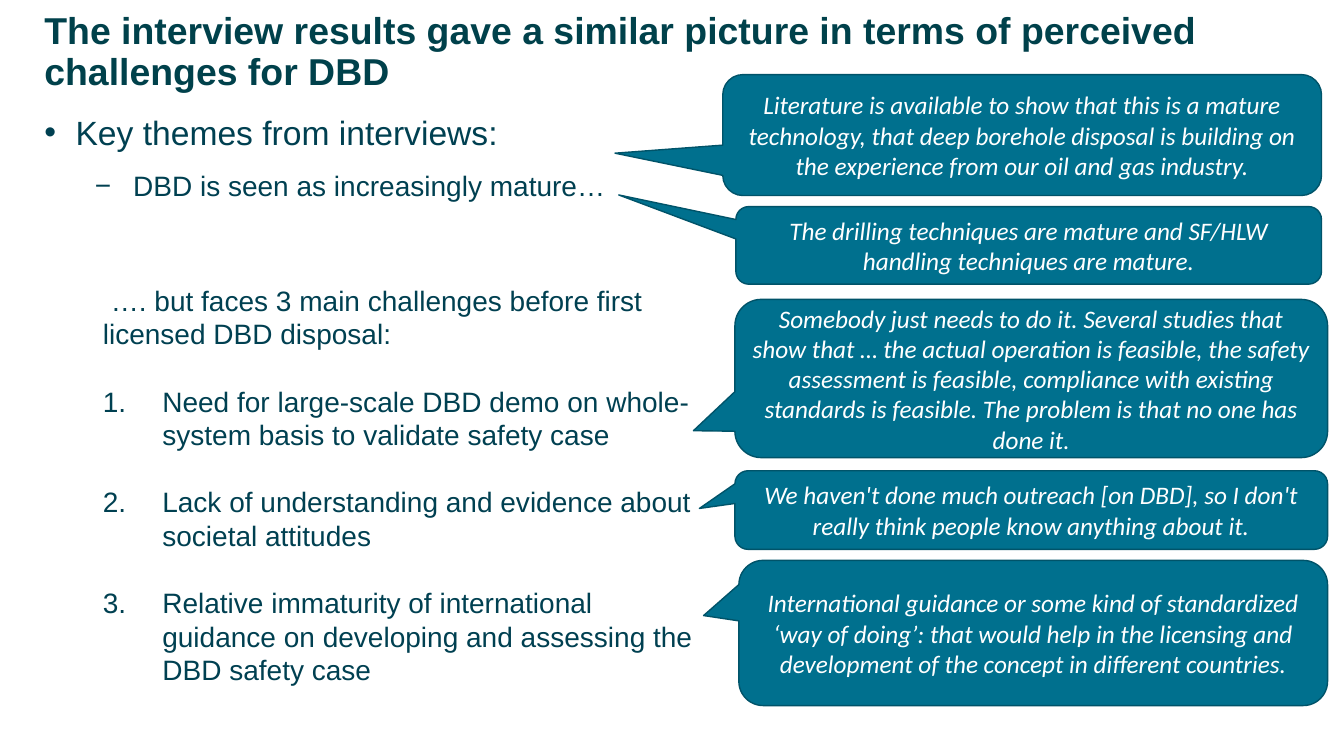
from typing import NamedTuple

import pptx
import pptx.dml.color
import pptx.enum.shapes
import pptx.enum.text
import pptx.oxml.ns
import pptx.util
from lxml import etree

RGBColor = pptx.dml.color.RGBColor
HEADING_TEAL = RGBColor(0x00, 0x41, 0x4B)
BODY_TEAL = RGBColor(0x00, 0x40, 0x51)
CALLOUT_FILL = RGBColor(0x00, 0x70, 0x8E)
CALLOUT_EDGE = RGBColor(0x00, 0x53, 0x69)
WHITE = RGBColor(0xFF, 0xFF, 0xFF)

SLIDE_WIDTH = pptx.util.Inches(13.33)
SLIDE_HEIGHT = pptx.util.Inches(7.5)

HEADING_FONT = {"name": "Arial", "size": pptx.util.Pt(26.7), "bold": True}
THEME_FONT = {"name": "Arial", "size": pptx.util.Pt(24)}
DETAIL_FONT = {"name": "Arial", "size": pptx.util.Pt(20)}
QUOTE_FONT = {"name": "Calibri", "size": pptx.util.Pt(18), "italic": True}


class Area(NamedTuple):
    """Left, top, width and height in percent of the slide's size."""
    left: float
    top: float
    width: float
    height: float


class Point(NamedTuple):
    """A list paragraph; margin and indent in inches, space after in points."""
    text: str
    font: dict
    margin: float
    indent: float
    space_after: float
    bullet: dict[str, str]
    level: int = 0


class Quote(NamedTuple):
    """A callout; tip is the pointer's offset from the centre in shares of its size."""
    text: str
    area: Area
    tip: tuple[float, float]


TITLE = "The interview results gave a similar picture in terms of perceived challenges for DBD"
TITLE_AREA = Area(2.55, -2.67, 94.88, 19.33)
THEMES_AREA = Area(2.55, 14.13, 93.15, 33.6)
CHALLENGES_AREA = Area(6.9, 36.8, 45.68, 62.67)

THEMES = [
    Point("Key themes from interviews:", THEME_FONT, 0.31, -0.31, 12, {"char": "•"}),
    Point("DBD is seen as increasingly mature…", DETAIL_FONT, 0.88, -0.38, 12, {"char": "−"}, 1),
]
CHALLENGES = [
    Point("…. but faces 3 main challenges before first licensed DBD disposal:",
          DETAIL_FONT, 0, 0.08, 24, {}),
] + [
    Point(challenge, DETAIL_FONT, 0.59, -0.59, 24, {"type": "arabicPeriod"}, 1)
    for challenge in (
        "Need for large-scale DBD demo on whole-system basis to validate safety case",
        "Lack of understanding and evidence about societal attitudes",
        "Relative immaturity of international guidance on developing and assessing "
        "the DBD safety case",
    )
]
QUOTES = [
    Quote("Literature is available to show that this is a mature technology, that deep borehole "
          "disposal is building on the experience from our oil and gas industry.",
          Area(53.78, 9.87, 44.55, 16), (-0.68, 0.15)),
    Quote("The drilling techniques are mature and SF/HLW handling techniques are mature.",
          Area(54.75, 27.33, 43.58, 10.27), (-0.7, -0.65)),
    Quote("Somebody just needs to do it. Several studies that show that … the actual operation "
          "is feasible, the safety assessment is feasible, compliance with existing standards "
          "is feasible. The problem is that no one has done it.",
          Area(54.68, 39.6, 44.1, 20.93), (-0.57, 0.33)),
    Quote("We haven't done much outreach [on DBD], so I don't really think people know "
          "anything about it.",
          Area(54.68, 62.27, 44.1, 10.4), (-0.56, -0.02)),
    Quote("International guidance or some kind of standardized ‘way of doing’: that would help "
          "in the licensing and development of the concept in different countries.",
          Area(54.98, 74.13, 43.8, 19.2), (-0.56, -0.12)),
]


def to_lengths(area: Area) -> dict[str, int]:
    return {
        "left": round(SLIDE_WIDTH * area.left / 100),
        "top": round(SLIDE_HEIGHT * area.top / 100),
        "width": round(SLIDE_WIDTH * area.width / 100),
        "height": round(SLIDE_HEIGHT * area.height / 100),
    }


def apply(target, values: dict) -> None:
    for attribute, value in values.items():
        setattr(target, attribute, value)


def write(paragraph, text: str, font: dict, color: RGBColor) -> None:
    run = paragraph.add_run()
    run.text = text
    apply(run.font, font)
    run.font.color.rgb = color


def set_bullet(paragraph, point: Point) -> None:
    properties = paragraph._p.get_or_add_pPr()
    properties.set("marL", str(pptx.util.Inches(point.margin)))
    properties.set("indent", str(pptx.util.Inches(point.indent)))
    tag = "a:buNone"
    if point.bullet:
        tag = "a:buChar" if "char" in point.bullet else "a:buAutoNum"
    etree.SubElement(properties, pptx.oxml.ns.qn(tag), point.bullet)


def fill_title(title) -> None:
    apply(title, to_lengths(TITLE_AREA))
    apply(title.text_frame, {
        "auto_size": pptx.enum.text.MSO_AUTO_SIZE.NONE,
        "vertical_anchor": pptx.enum.text.MSO_ANCHOR.MIDDLE,
    })
    heading = title.text_frame.paragraphs[0]
    apply(heading, {"alignment": pptx.enum.text.PP_ALIGN.LEFT, "line_spacing": 0.9})
    write(heading, TITLE, HEADING_FONT, HEADING_TEAL)


def fill_list(body, area: Area, points: list[Point]) -> None:
    apply(body, to_lengths(area))
    frame = body.text_frame
    frame.auto_size = pptx.enum.text.MSO_AUTO_SIZE.NONE
    for index, point in enumerate(points):
        paragraph = frame.add_paragraph() if index else frame.paragraphs[0]
        set_bullet(paragraph, point)
        apply(paragraph, {
            "level": point.level,
            "space_before": pptx.util.Pt(0),
            "space_after": pptx.util.Pt(point.space_after),
        })
        write(paragraph, point.text, point.font, BODY_TEAL)


def draw_quote(slide, quote: Quote) -> None:
    callout = slide.shapes.add_shape(
        pptx.enum.shapes.MSO_SHAPE.ROUNDED_RECTANGULAR_CALLOUT,
        **to_lengths(quote.area))
    callout.adjustments[0], callout.adjustments[1] = quote.tip
    callout.shadow.inherit = False
    callout.fill.solid()
    callout.fill.fore_color.rgb = CALLOUT_FILL
    callout.line.color.rgb = CALLOUT_EDGE
    callout.line.width = pptx.util.Pt(1)
    apply(callout.text_frame, {
        "word_wrap": True,
        "vertical_anchor": pptx.enum.text.MSO_ANCHOR.MIDDLE,
    })
    paragraph = callout.text_frame.paragraphs[0]
    paragraph.alignment = pptx.enum.text.PP_ALIGN.CENTER
    write(paragraph, quote.text, QUOTE_FONT, WHITE)


def main() -> None:
    presentation = pptx.Presentation()
    apply(presentation, {"slide_width": SLIDE_WIDTH, "slide_height": SLIDE_HEIGHT})
    two_content = presentation.slide_layouts[3]
    slide = presentation.slides.add_slide(two_content)
    fill_title(slide.shapes.title)
    fill_list(slide.placeholders[1], THEMES_AREA, THEMES)
    fill_list(slide.placeholders[2], CHALLENGES_AREA, CHALLENGES)
    for quote in QUOTES:
        draw_quote(slide, quote)
    presentation.save("out.pptx")


if __name__ == "__main__":
    main()
